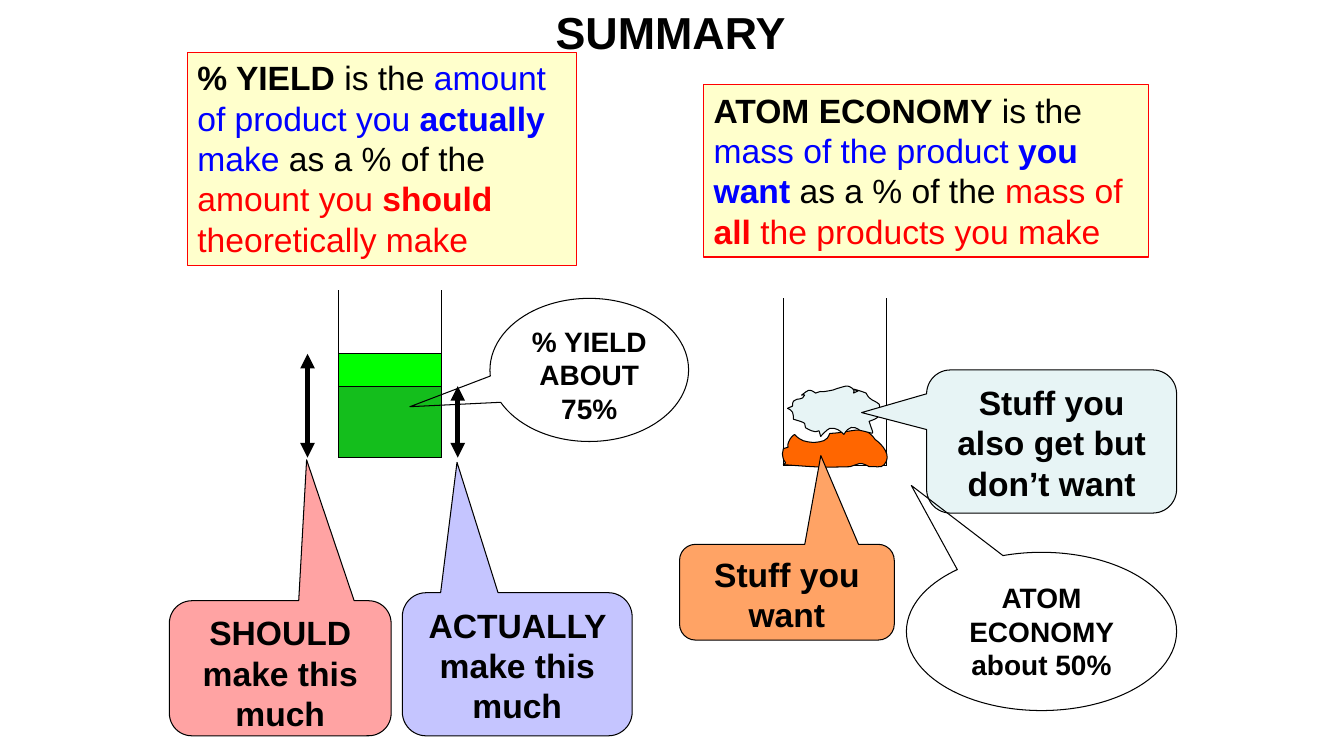
from dataclasses import dataclass

from lxml.etree import SubElement
from pptx import Presentation
from pptx.dml.color import RGBColor
from pptx.enum.shapes import MSO_CONNECTOR, MSO_SHAPE
from pptx.enum.text import MSO_ANCHOR, MSO_AUTO_SIZE, PP_ALIGN
from pptx.oxml.ns import qn
from pptx.util import Inches, Pt

COLORS = {
    "black": "000000", "blue": "0000FF", "red": "FF0000",
    "cream": "FFFFCC", "lime": "00FF00", "green": "14BE1C",
    "orange": "FF6600", "light orange": "FFA365", "ice": "E7F4F5",
    "pink": "FFA3A3", "lavender": "C5C5FF",
}
BEAKER_WIDTH, BEAKER_HEIGHT = 1.02, 1.66
YIELD_LEFT, YIELD_TOP = 3.36, 2.88
ATOM_LEFT, ATOM_TOP = 7.77, 2.96
YIELD_BOTTOM = YIELD_TOP + BEAKER_HEIGHT
SHOULD_LEVEL, ACTUAL_LEVEL = 3.51, 3.83

ROUNDED = MSO_SHAPE.ROUNDED_RECTANGULAR_CALLOUT
OVAL = MSO_SHAPE.OVAL_CALLOUT


@dataclass
class Span:
    text: str
    color: str = "black"
    bold: bool = False


@dataclass
class Definition:
    box: tuple[float, float, float, float]
    spans: list[Span]


@dataclass
class Callout:
    kind: MSO_SHAPE
    box: tuple[float, float, float, float]
    tip: tuple[float, float]
    text: str
    fill: str | None = None
    size: int = 24


@dataclass
class Blob:
    """A closed outline: a start point, then cubic curves as x, y of two controls and an end."""
    fill: str
    start: tuple[float, float]
    curves: list[tuple[float, ...]]


ATOM_DEFINITION = Definition((6.98, 0.84, 4.41, 1.71), [
    Span("ATOM ECONOMY", bold=True), Span(" is the "),
    Span("mass of the product ", "blue"), Span("you want", "blue", True),
    Span(" as a % of the "), Span("mass of ", "red"),
    Span("all", "red", True), Span(" the products you make", "red"),
])
YIELD_DEFINITION = Definition((1.86, 0.52, 3.86, 2.11), [
    Span("% YIELD ", bold=True), Span("is the "),
    Span("amount of product you ", "blue"), Span("actually", "blue", True),
    Span(" make", "blue"), Span(" as a % of the "),
    Span("amount you ", "red"), Span("should", "red", True),
    Span(" theoretically make", "red"),
])

ATOM_CALLOUTS = [
    Callout(ROUNDED, (6.74, 5.4, 2.13, 0.95), (0.158, -1.427), "Stuff you want", "light orange"),
    Callout(ROUNDED, (9.19, 3.67, 2.48, 1.42), (-0.76, -0.202),
            "Stuff you also get but don’t want", "ice"),
    Callout(OVAL, (8.99, 5.48, 2.68, 1.57), (-0.482, -0.923), "ATOM ECONOMY about 50%", size=20),
]
YIELD_CALLOUTS = [
    Callout(ROUNDED, (1.68, 5.96, 2.2, 1.34), (0.119, -1.543), "SHOULD make this much", "pink"),
    Callout(ROUNDED, (3.99, 5.88, 2.28, 1.42), (-0.262, -1.411),
            "ACTUALLY make this much", "lavender"),
    Callout(OVAL, (4.86, 2.96, 1.97, 1.42), (-0.903, 0.257), "% YIELD ABOUT 75%", size=20),
]

BLOBS = [
    Blob("orange", (7.77, 4.61), [
        (8.07, 4.63, 8.1, 4.64, 8.43, 4.63), (8.46, 4.62, 8.49, 4.61, 8.52, 4.6),
        (8.56, 4.59, 8.62, 4.63, 8.62, 4.63), (8.67, 4.62, 8.74, 4.65, 8.77, 4.61),
        (8.85, 4.52, 8.75, 4.41, 8.68, 4.36), (8.57, 4.2, 8.47, 4.29, 8.23, 4.3),
        (8.2, 4.38, 8.16, 4.38, 8.07, 4.39), (7.98, 4.38, 7.95, 4.38, 7.88, 4.31),
        (7.87, 4.32, 7.85, 4.33, 7.84, 4.35), (7.77, 4.47, 7.87, 4.42, 7.77, 4.45),
        (7.77, 4.47, 7.76, 4.49, 7.76, 4.5), (7.77, 4.62, 7.82, 4.57, 7.77, 4.61),
    ]),
    Blob("ice", (7.95, 3.92), [
        (8.02, 3.87, 8.02, 3.85, 8.09, 3.9), (8.2, 3.86, 8.06, 3.91, 8.26, 3.87),
        (8.31, 3.85, 8.39, 3.83, 8.39, 3.83), (8.41, 3.83, 8.43, 3.83, 8.45, 3.85),
        (8.51, 3.9, 8.41, 3.92, 8.51, 3.88), (8.38, 3.83, 8.57, 3.89, 8.59, 3.9),
        (8.63, 3.98, 8.66, 3.96, 8.72, 4.01), (8.75, 4.13, 8.71, 4.15, 8.62, 4.18),
        (8.67, 4.34, 8.69, 4.3, 8.53, 4.27), (8.46, 4.22, 8.42, 4.23, 8.37, 4.31),
        (8.33, 4.27, 8.29, 4.24, 8.23, 4.25), (8.2, 4.26, 8.14, 4.33, 8.14, 4.33),
        (8.1, 4.2, 8.16, 4.34, 8, 4.25), (7.98, 4.25, 7.99, 4.21, 7.98, 4.2),
        (7.98, 4.19, 7.87, 4.16, 7.87, 4.16), (7.87, 4.14, 7.87, 4.11, 7.86, 4.09),
        (7.82, 4.03, 7.77, 4.07, 7.86, 4.03), (7.86, 4.01, 7.86, 3.99, 7.87, 3.98),
        (7.91, 3.94, 7.96, 3.98, 7.98, 3.92), (7.99, 3.91, 7.96, 3.92, 7.95, 3.92),
    ]),
]


def rgb(name: str) -> RGBColor:
    return RGBColor.from_string(COLORS[name])


def paint(shape, fill: str | None, line: str = "black") -> None:
    shape.shadow.inherit = False
    if fill:
        shape.fill.solid()
        shape.fill.fore_color.rgb = rgb(fill)
    else:
        shape.fill.background()
    shape.line.color.rgb = rgb(line)
    shape.line.width = Pt(0.75)


def write(shape, spans: list[Span], size: int, align: PP_ALIGN) -> None:
    frame = shape.text_frame
    frame.word_wrap = True
    frame.auto_size = MSO_AUTO_SIZE.NONE
    frame.vertical_anchor = MSO_ANCHOR.TOP
    frame.margin_left = frame.margin_right = Inches(0.1)
    frame.margin_top = frame.margin_bottom = Inches(0.05)
    paragraph = frame.paragraphs[0]
    paragraph.alignment = align
    for span in spans:
        run = paragraph.add_run()
        run.text = span.text
        run.font.name = "Arial"
        run.font.size = Pt(size)
        run.font.bold = span.bold
        run.font.color.rgb = rgb(span.color)


def add_box(shapes, kind: MSO_SHAPE, box: tuple[float, ...], fill: str | None, line: str = "black"):
    shape = shapes.add_shape(kind, *map(Inches, box))
    paint(shape, fill, line)
    return shape


def add_line(shapes, start: tuple[float, float], end: tuple[float, float], width: float = 0.75):
    line = shapes.add_connector(MSO_CONNECTOR.STRAIGHT, *map(Inches, (*start, *end)))
    line.line.color.rgb = rgb("black")
    line.line.width = Pt(width)
    SubElement(line._element.spPr, qn("a:effectLst"))
    return line


def add_double_arrow(shapes, x: float, top: float, bottom: float) -> None:
    outline = add_line(shapes, (x, top), (x, bottom), 3.5).line._get_or_add_ln()
    for end in ("a:headEnd", "a:tailEnd"):
        SubElement(outline, qn(end), type="triangle")


def add_beaker(shapes, left: float, top: float):
    """Draw an open-topped beaker and return its group's shapes."""
    beaker = shapes.add_group_shape().shapes
    right, bottom = left + BEAKER_WIDTH, top + BEAKER_HEIGHT
    add_line(beaker, (right, top), (right, bottom))
    add_line(beaker, (left, top), (left, bottom))
    add_line(beaker, (left, bottom), (right, bottom))
    return beaker


def add_blob(shapes, blob: Blob) -> None:
    """Lay out start, control and end points, then join each three segments into one curve."""
    builder = shapes.build_freeform(*map(Inches, blob.start))
    vertices = [(Inches(curve[i]), Inches(curve[i + 1])) for curve in blob.curves for i in (0, 2, 4)]
    builder.add_line_segments(vertices, close=True)
    shape = builder.convert_to_shape()
    segments = list(shape._element.iter(qn("a:lnTo")))
    for first in range(0, len(segments), 3):
        curve, *rest = segments[first:first + 3]
        outline = curve.getparent()
        cubic = SubElement(outline, qn("a:cubicBezTo"))
        outline.replace(curve, cubic)
        cubic.append(curve[0])
        for segment in rest:
            cubic.append(segment[0])
            outline.remove(segment)
    paint(shape, blob.fill)


def add_definition(shapes, definition: Definition) -> None:
    box = add_box(shapes, MSO_SHAPE.RECTANGLE, definition.box, "cream", "red")
    write(box, definition.spans, 24, PP_ALIGN.LEFT)


def add_callouts(shapes, callouts: list[Callout]) -> None:
    for callout in callouts:
        bubble = add_box(shapes, callout.kind, callout.box, callout.fill)
        bubble.adjustments[0], bubble.adjustments[1] = callout.tip
        write(bubble, [Span(callout.text, bold=True)], callout.size, PP_ALIGN.CENTER)


def main() -> None:
    presentation = Presentation()
    presentation.slide_width, presentation.slide_height = Inches(13.33), Inches(7.5)
    slide = presentation.slides.add_slide(presentation.slide_layouts[5])
    shapes = slide.shapes
    title = shapes.title
    title.left, title.top, title.width, title.height = map(Inches, (5.41, 0, 2.6, 0.63))
    write(title, [Span("SUMMARY", bold=True)], 32, PP_ALIGN.LEFT)

    atom_beaker = add_beaker(shapes, ATOM_LEFT, ATOM_TOP)
    for blob in BLOBS:
        add_blob(atom_beaker, blob)
    add_definition(shapes, ATOM_DEFINITION)
    add_callouts(shapes, ATOM_CALLOUTS)

    add_definition(shapes, YIELD_DEFINITION)
    yield_beaker = add_beaker(shapes, YIELD_LEFT, YIELD_TOP)
    for level, fill in ((SHOULD_LEVEL, "lime"), (ACTUAL_LEVEL, "green")):
        liquid = (YIELD_LEFT, level, BEAKER_WIDTH, YIELD_BOTTOM - level)
        add_box(yield_beaker, MSO_SHAPE.RECTANGLE, liquid, fill)
    add_double_arrow(shapes, 3.05, SHOULD_LEVEL, YIELD_BOTTOM)
    add_double_arrow(shapes, 4.54, ACTUAL_LEVEL, YIELD_BOTTOM)
    add_callouts(shapes, YIELD_CALLOUTS)
    presentation.save("out.pptx")


if __name__ == "__main__":
    main()
